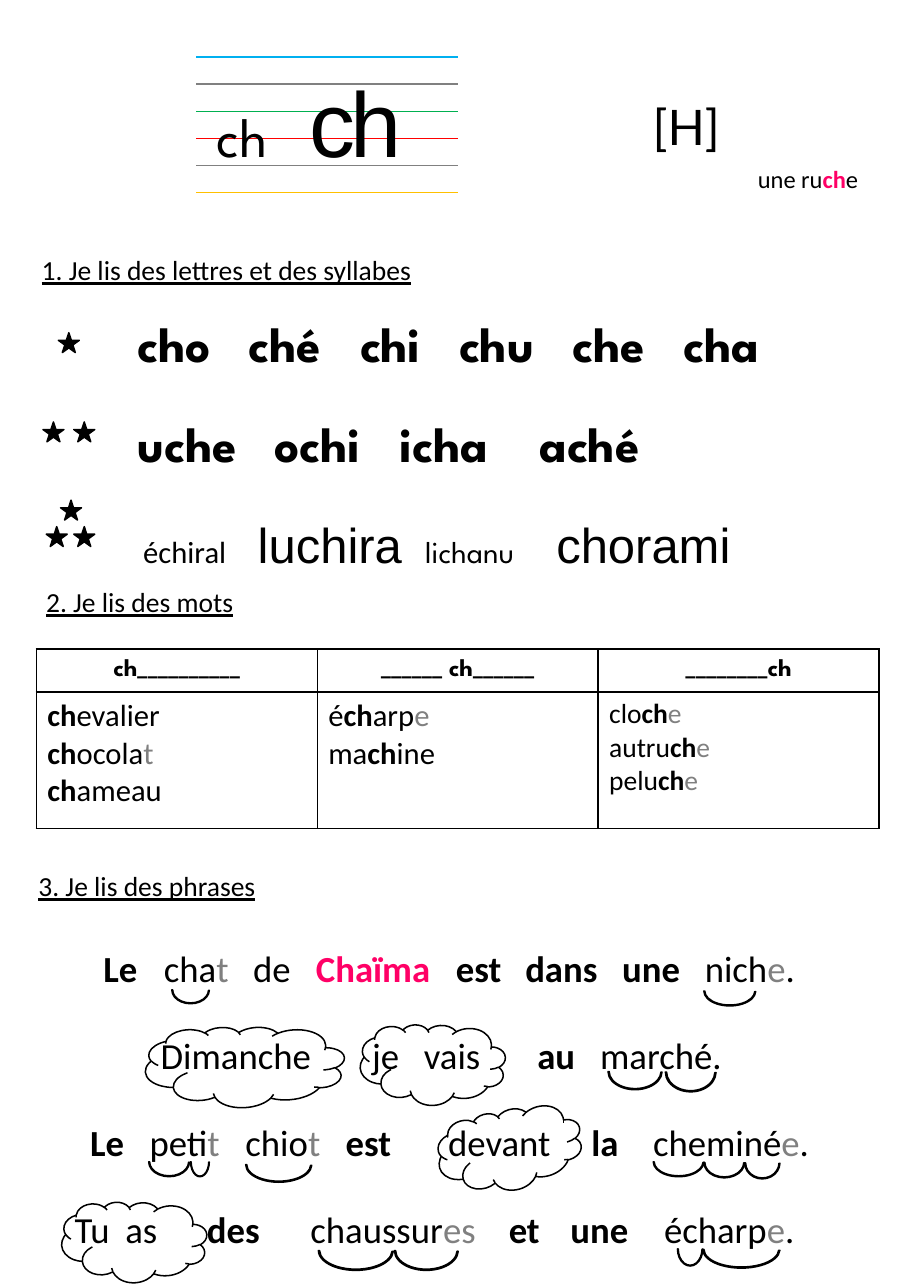
from dataclasses import dataclass, replace
from typing import NamedTuple, Optional

from lxml import etree
from pptx import Presentation
from pptx import util as u
from pptx.dml import color as dml
from pptx.enum import shapes, text
from pptx.oxml import ns

BLACK, WHITE, GREY, PINK = "000000", "FFFFFF", "808080", "FF0066"
NO_TABLE_STYLE = "{2D5ABB26-0587-4C30-8999-92F81FD0307C}"
INSET = 0.1
CENTER = text.PP_ALIGN.CENTER


@dataclass(frozen=True)
class Style:
    font: str
    size: float
    bold: bool = False
    color: str = BLACK
    underline: bool = False
    tracking: float = 0


class Run(NamedTuple):
    text: str
    style: Style


class Word(NamedTuple):
    x: float
    runs: list[Run]


class Box(NamedTuple):
    left: float
    top: float
    width: float
    height: float


class Cloud(NamedTuple):
    box: Box
    angle: float


HEADING = Style("Calibri", 18, underline=True)
BODY = Style("Calibri", 24)
SPARTAN = Style("League Spartan", 20)
SYLLABLE = replace(SPARTAN, size=32, bold=True)
ARIAL = Style("Arial", 32)


def styled(wording: str, style: Style = BODY) -> list[Run]:
    """Split on marks: *bold*, ~silent letters~, ^highlight^."""
    variants = {"*": replace(style, bold=True), "~": replace(style, color=GREY),
                "^": replace(style, bold=True, color=PINK)}
    runs, current, piece = [], style, ""
    for char in wording + "\0":
        if char in variants or char == "\0":
            if piece:
                runs.append(Run(piece, current))
            current = style if current != style else variants.get(char, style)
            piece = ""
        else:
            piece += char
    return runs


def words(style: Style, *placed: tuple[float, str]) -> list[Word]:
    return [Word(x, styled(wording, style)) for x, wording in placed]


SENTENCES = [
    words(BODY, (0.94, "*Le*"), (1.49, "cha~t~"), (2.3, "de"), (2.87, "^Chaïma^"),
          (4.14, "*est*"), (4.77, "*dans*"), (5.65, "*une*"), (6.4, "nich~e~.")),
    words(BODY, (1.46, "Dimanche"), (3.38, "je"), (3.85, "vais"), (4.88, "*au*"),
          (5.45, "marché.")),
    words(BODY, (0.82, "*Le*"), (1.36, "peti~t~"), (2.23, "chio~t~"), (3.14, "*est*"),
          (4.07, "devant"), (5.37, "*la*"), (5.93, "cheminé~e~.")),
    words(BODY, (0.68, "Tu"), (1.14, "as"), (1.88, "*des*"), (2.82, "chaussur~es~"),
          (4.62, "*et*"), (5.18, "*une*"), (6.03, "écharp~e~.")),
]
SYLLABLE_ROWS = {
    2.8: words(SYLLABLE, (1.25, "cho"), (2.26, "ché"), (3.27, "chi"), (4.17, "chu"),
               (5.2, "che"), (6.21, "cha")),
    3.7: words(SYLLABLE, (1.25, "uche"), (2.49, "ochi"), (3.63, "icha"), (4.9, "aché")),
}
INVENTED_WORDS = [
    Word(1.3, [Run("échiral", replace(BODY, size=20))]), Word(2.34, [Run("luchira", ARIAL)]),
    Word(3.86, [Run("lichanu", SPARTAN)]), Word(5.05, [Run("chorami", ARIAL)]),
]
LETTERS = [Word(1.97, [Run("ch", replace(SPARTAN, size=36))]),
           Word(2.81, [Run("ch", replace(ARIAL, size=60, tracking=-3))])]
WORD_COLUMNS = [
    ("ch__________", 20, ["*ch*evalier", "*ch*ocola~t~", "*ch*ameau"]),
    ("______ ch______", 20, ["é*ch*arp~e~", "ma*ch*ine"]),
    ("________ch", 18, ["clo*ch*~e~", "autru*ch*~e~", "pelu*ch*~e~"]),
]
RULE_COLORS = ["00B0F0", GREY, "00B050", "FF0000", GREY, "FFC000"]
STARS = [(0.53, 3.02), (0.39, 3.83), (0.67, 3.83), (0.55, 4.54), (0.42, 4.78), (0.67, 4.78)]
SYLLABLE_ARCS = [
    Box(1.56, 8.86, 0.34, 0.25), Box(6.39, 8.86, 0.47, 0.27),
    Box(5.52, 9.56, 0.49, 0.33), Box(6.04, 9.55, 0.46, 0.36),
    Box(1.35, 10.41, 0.37, 0.27), Box(1.73, 10.41, 0.17, 0.27), Box(2.23, 10.41, 0.6, 0.32),
    Box(5.93, 10.41, 0.46, 0.27), Box(6.39, 10.41, 0.37, 0.28), Box(6.76, 10.41, 0.32, 0.29),
    Box(2.89, 11.17, 0.68, 0.36), Box(3.58, 11.17, 0.58, 0.36),
    Box(6.15, 11.18, 0.23, 0.31), Box(6.38, 11.17, 0.7, 0.34),
]
CLOUDS = [Cloud(Box(3.97, 10.06, 1.32, 0.74), 344.2), Cloud(Box(0.56, 10.9, 1.32, 0.74), 356.2),
          Cloud(Box(3.27, 9.29, 1.32, 0.74), 356.2), Cloud(Box(1.32, 9.31, 1.81, 0.74), 356.2)]


def rgb(value: str) -> dml.RGBColor:
    return dml.RGBColor.from_string(value)


def inches(box: Box) -> list[u.Length]:
    return [u.Inches(length) for length in box]


def write(paragraph, runs: list[Run], align=None) -> None:
    paragraph.alignment = align
    for wording, style in runs:
        run = paragraph.add_run()
        run.text = wording
        font = run.font
        font.name, font.size, font.bold = style.font, u.Pt(style.size), style.bold
        font.underline = style.underline
        font.color.rgb = rgb(style.color)
        if style.tracking:
            run._r.get_or_add_rPr().set("spc", str(round(style.tracking * 100)))


def write_words(paragraph, placed: list[Word], left: float) -> None:
    """Set each word at its x on the page with a tab stop; left is where the text area starts."""
    stops = etree.SubElement(paragraph._p.get_or_add_pPr(), ns.qn("a:tabLst"))
    for x, runs in placed:
        if x > left + 0.01:
            etree.SubElement(stops, ns.qn("a:tab"), pos=str(u.Inches(x - left)), algn="l")
            runs = [Run("\t" + runs[0].text, runs[0].style), *runs[1:]]
        write(paragraph, runs)


def add_text(slide, box: Box):
    frame = slide.shapes.add_textbox(*inches(box)).text_frame
    frame.word_wrap = True
    frame.auto_size = text.MSO_AUTO_SIZE.SHAPE_TO_FIT_TEXT
    return frame


def add_table(slide, box: Box, widths: list[float], heights: list[float]):
    table = slide.shapes.add_table(len(heights), len(widths), *inches(box)).table
    table.first_row = table.horz_banding = False
    table._tbl.tblPr.find(ns.qn("a:tableStyleId")).text = NO_TABLE_STYLE
    for column, width in zip(table.columns, widths):
        column.width = u.Inches(width)
    for row, height in zip(table.rows, heights):
        row.height = u.Inches(height)
    for cell in table.iter_cells():
        cell.fill.background()
    return table


def add_borders(cell, **sides: Optional[str]) -> None:
    """Draw 1 pt borders; sides are given in the order L, R, T, B."""
    properties = cell._tc.get_or_add_tcPr()
    drawn = [(side, color) for side, color in sides.items() if color]
    for place, (side, color) in enumerate(drawn):
        line = etree.Element(ns.qn(f"a:ln{side}"), w=str(u.Pt(1)))
        fill = etree.SubElement(line, ns.qn("a:solidFill"))
        etree.SubElement(fill, ns.qn("a:srgbClr"), val=color)
        properties.insert(place, line)


def add_outlined(slide, kind, box: Box, fill: Optional[str] = None, angle: float = 0):
    shape = slide.shapes.add_shape(kind, *inches(box))
    shape.shadow.inherit = False
    shape.rotation = angle
    shape.line.color.rgb, shape.line.width = rgb(BLACK), u.Pt(1)
    if fill:
        shape.fill.solid()
        shape.fill.fore_color.rgb = rgb(fill)
    else:
        shape.fill.background()
    return shape


def add_word_table(slide) -> None:
    table = add_table(slide, Box(0.33, 5.89, 7.65, 1.63), [2.55] * 3, [0.39, 1.24])
    for cell in table.iter_cells():
        add_borders(cell, L=BLACK, R=BLACK, T=BLACK, B=BLACK)
    for column, (pattern, size, examples) in enumerate(WORD_COLUMNS):
        header, body = table.cell(0, column), table.cell(1, column)
        header.vertical_anchor = text.MSO_ANCHOR.MIDDLE
        write(header.text_frame.paragraphs[0],
              [Run(pattern, replace(SPARTAN, size=16, bold=True))], CENTER)
        for index, example in enumerate(examples):
            frame = body.text_frame
            paragraph = frame.add_paragraph() if index else frame.paragraphs[0]
            write(paragraph, styled(example, replace(BODY, size=size)))


def add_writing_lines(slide) -> None:
    count = len(RULE_COLORS)
    table = add_table(slide, Box(1.78, 0.27, 2.38, 1.48), [2.38], [1.48 / count] * count)
    for cell, above, below in zip(table.iter_cells(), [None, *RULE_COLORS], RULE_COLORS):
        add_borders(cell, T=above, B=below)
        cell.margin_top = cell.margin_bottom = 0
        etree.SubElement(cell.text_frame.paragraphs[0]._p, ns.qn("a:endParaRPr"), sz="800")


def main() -> None:
    deck = Presentation()
    deck.slide_width, deck.slide_height = u.Inches(8.27), u.Inches(11.69)
    slide = deck.slides.add_slide(deck.slide_layouts[6])

    phrases = add_text(slide, Box(0.25, 7.84, 7.71, 3.64))
    write(phrases.paragraphs[0], styled("3. Je lis des phrases", HEADING))
    for sentence in SENTENCES:
        paragraph = phrases.add_paragraph()
        paragraph.space_before = u.Pt(28.2)
        write_words(paragraph, sentence, 0.25 + INSET)

    levels = add_table(slide, Box(0.32, 2.73, 7.54, 2.5), [0.64, 6.9], [0.81] * 3)
    hardest = levels.cell(2, 1)
    hardest.margin_top = u.Inches(0.36)
    write_words(hardest.text_frame.paragraphs[0], INVENTED_WORDS, 0.96 + INSET)
    add_word_table(slide)

    for left, top, title in [(0.28, 2.25, "1. Je lis des lettres et des syllabes"),
                             (0.32, 5.26, "2. Je lis des mots")]:
        write(add_text(slide, Box(left, top, 7.71, 0.4)).paragraphs[0], styled(title, HEADING))
    for top, syllables in SYLLABLE_ROWS.items():
        frame = add_text(slide, Box(1.15, top, 6.98, 0.64))
        write_words(frame.paragraphs[0], syllables, 1.15 + INSET)
    for left, top in STARS:
        add_outlined(slide, shapes.MSO_SHAPE.STAR_5_POINT, Box(left, top, 0.19, 0.18), BLACK)

    add_writing_lines(slide)
    write_words(add_text(slide, Box(1.62, 0.55, 2.59, 1.11)).paragraphs[0], LETTERS, 1.62 + INSET)
    for box, runs in [(Box(5.37, 0.83, 1.72, 0.64), styled("[H]", Style("Lato", 32))),
                      (Box(6.39, 1.44, 1.89, 0.37), styled("une ru^ch^e", replace(BODY, size=16)))]:
        write(add_text(slide, box).paragraphs[0], runs, CENTER)

    for box, angle in CLOUDS:
        cloud = add_outlined(slide, shapes.MSO_SHAPE.CLOUD, box, angle=angle)
        cloud._element.spPr.find(ns.qn("a:xfrm")).set("flipH", "1")
    for box in SYLLABLE_ARCS:
        arc = add_outlined(slide, shapes.MSO_SHAPE.BLOCK_ARC, box, WHITE, 180)
        for index, value in enumerate([108.8, 0, 0.03]):
            arc.adjustments[index] = value
    deck.save("out.pptx")


if __name__ == "__main__":
    main()
